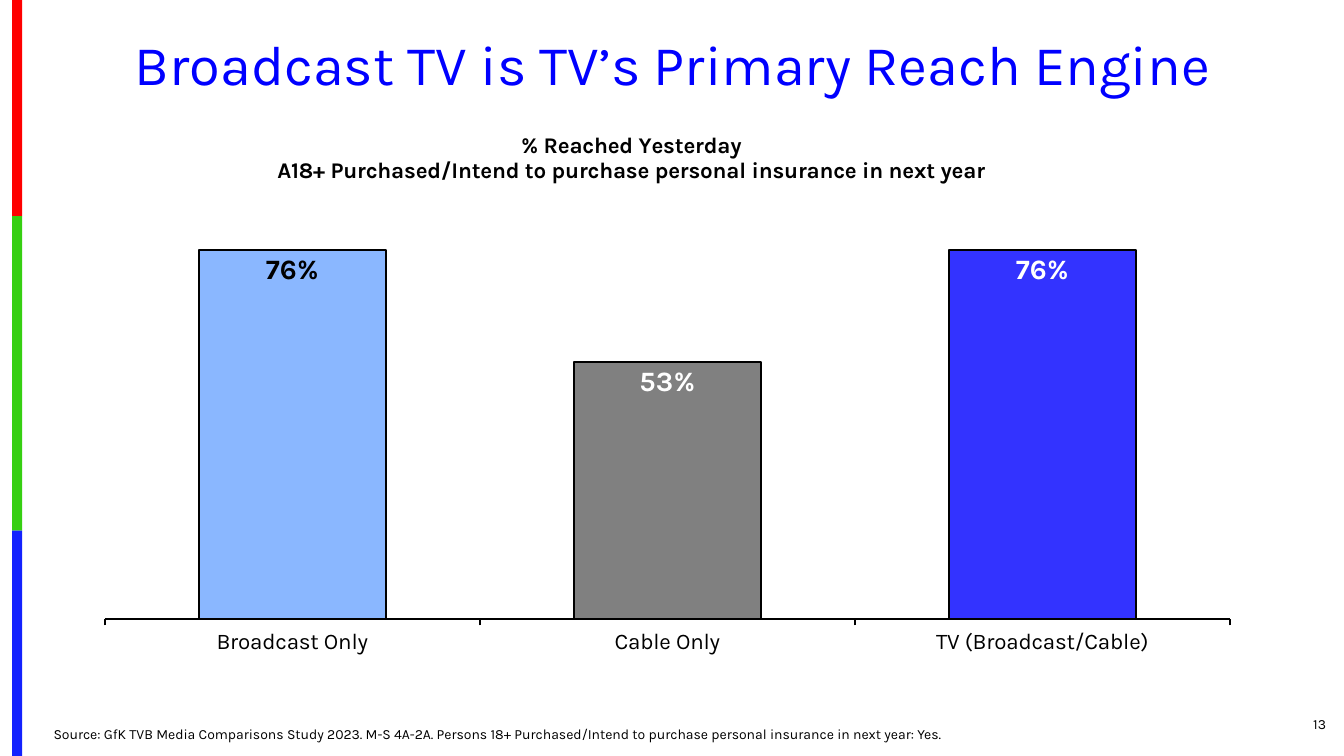
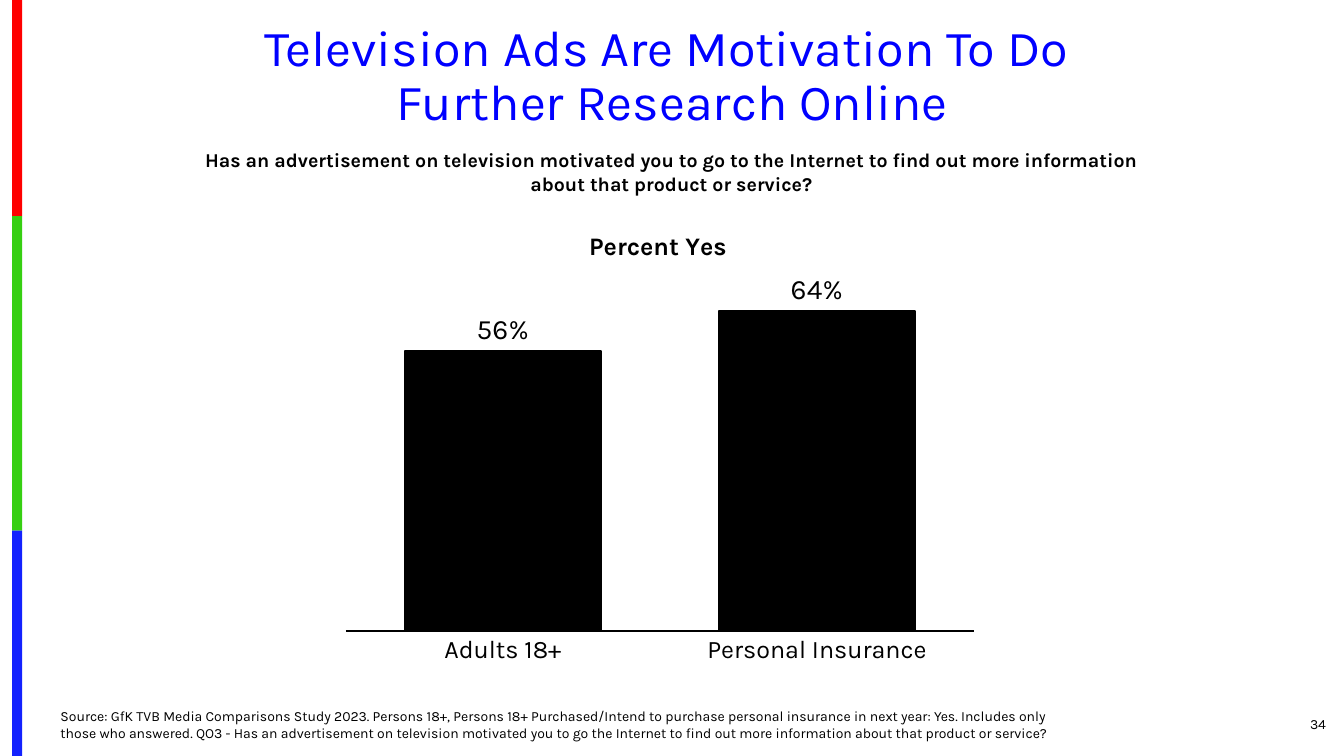
import lxml.etree
import pptx
import pptx.chart.data
import pptx.dml.color
import pptx.enum.chart
import pptx.enum.shapes
import pptx.enum.text
import pptx.oxml.ns
import pptx.util

RGBColor = pptx.dml.color.RGBColor
Pt = pptx.util.Pt
Anchor = pptx.enum.text.MSO_ANCHOR
Align = pptx.enum.text.PP_ALIGN
LabelPosition = pptx.enum.chart.XL_LABEL_POSITION
TickMark = pptx.enum.chart.XL_TICK_MARK
qn = pptx.oxml.ns.qn

BLACK = RGBColor(0x00, 0x00, 0x00)
WHITE = RGBColor(0xFF, 0xFF, 0xFF)
TITLE_BLUE = RGBColor(0x00, 0x00, 0xFF)
STRIPE_RED = RGBColor(0xFE, 0x00, 0x00)
STRIPE_GREEN = RGBColor(0x36, 0xCF, 0x12)
STRIPE_BLUE = RGBColor(0x13, 0x22, 0xFE)
BAR_BLUE = RGBColor(0x33, 0x33, 0xFF)
BAR_LIGHT_BLUE = RGBColor(0x8A, 0xB7, 0xFF)
BAR_GRAY = RGBColor(0x80, 0x80, 0x80)

FONT = "Karla"
STRIPES = [(STRIPE_RED, 28.6), (STRIPE_GREEN, 41.6), (STRIPE_BLUE, 29.8)]


class Deck:
    """Hold the shared style and the current slide; boxes are percentages of the slide."""

    def __init__(self):
        self.presentation = pptx.Presentation()
        self.presentation.slide_width = pptx.util.Inches(13.33)
        self.presentation.slide_height = pptx.util.Inches(7.5)
        self.slide = None

    def box(self, left, top, width, height):
        across = self.presentation.slide_width / 100
        down = self.presentation.slide_height / 100
        return [int(left * across), int(top * down), int(width * across), int(height * down)]

    def style_font(self, font, size, color=BLACK, bold=False):
        font.name = FONT
        font.size = Pt(size)
        font.bold = bold
        font.color.rgb = color

    def set_text(self, shape, text, size, color=BLACK, bold=False,
                 align=Align.LEFT, anchor=Anchor.TOP, spacing=1.0):
        frame = shape.text_frame
        frame.text = text
        frame.word_wrap = True
        frame.auto_size = pptx.enum.text.MSO_AUTO_SIZE.NONE
        frame.vertical_anchor = anchor
        for paragraph in frame.paragraphs:
            paragraph.alignment = align
            paragraph.line_spacing = spacing
            paragraph.space_before = Pt(0)
            for run in paragraph.runs:
                self.style_font(run.font, size, color, bold)

    def place(self, shape, box):
        shape.left, shape.top, shape.width, shape.height = self.box(*box)

    def add_slide(self, number):
        self.slide = self.presentation.slides.add_slide(self.presentation.slide_layouts[1])
        top = 0
        for color, height in STRIPES:
            stripe = self.slide.shapes.add_shape(
                pptx.enum.shapes.MSO_SHAPE.RECTANGLE, *self.box(0.9, top, 0.75, height))
            stripe.shadow.inherit = False
            stripe.fill.solid()
            stripe.fill.fore_color.rgb = color
            stripe.line.fill.background()
            top += height
        self.add_text(str(number), (91.3, 93.07, 8.1, 5.33), 10,
                      align=Align.RIGHT, anchor=Anchor.MIDDLE)

    def add_title(self, text, top, height, size):
        title = self.slide.shapes.title
        self.place(title, (3.45, top, 93.17, height))
        self.set_text(title, text, size, TITLE_BLUE, align=Align.CENTER,
                      anchor=Anchor.MIDDLE, spacing=0.9)

    def add_source(self, text, box, spacing):
        body = self.slide.placeholders[1]
        self.place(body, box)
        self.set_text(body, text, 10, anchor=Anchor.BOTTOM, spacing=spacing)
        for paragraph in body.text_frame.paragraphs:
            properties = paragraph._p.get_or_add_pPr()
            properties.set("marL", "0")
            properties.set("indent", "0")
            lxml.etree.SubElement(properties, qn("a:buNone"))

    def add_text(self, text, box, size, **style):
        self.set_text(self.slide.shapes.add_textbox(*self.box(*box)), text, size, **style)

    def set_layout(self, parent, index, **values):
        layout = parent.find(qn("c:layout"))
        if layout is None:
            layout = parent.makeelement(qn("c:layout"))
            parent.insert(index, layout)
        manual = lxml.etree.SubElement(layout, qn("c:manualLayout"))
        for name, value in values.items():
            lxml.etree.SubElement(manual, qn("c:" + name)).set("val", str(value))

    def paint_bar(self, bar_format, color):
        bar_format.fill.solid()
        bar_format.fill.fore_color.rgb = color
        bar_format.line.color.rgb = BLACK
        bar_format.line.width = Pt(1.5)

    def add_column_chart(self, box, values, title, title_size, title_at, plot_at, maximum,
                         gap, tick, axis_size, colors, label_colors, label_position, bold_labels):
        data = pptx.chart.data.CategoryChartData(number_format="0%")
        data.categories = list(values)
        data.add_series("Series 1", list(values.values()))
        chart = self.slide.shapes.add_chart(
            pptx.enum.chart.XL_CHART_TYPE.COLUMN_CLUSTERED, *self.box(*box), data).chart
        self.style_font(chart.font, 10)
        chart.has_legend = False

        chart.has_title = True
        frame = chart.chart_title.text_frame
        frame.text = title
        for paragraph in frame.paragraphs:
            self.style_font(paragraph.font, title_size, bold=True)
            for run in paragraph.runs:
                self.style_font(run.font, title_size, bold=True)
        self.set_layout(chart.element.find(".//" + qn("c:title")), 1,
                        xMode="edge", yMode="edge", x=title_at[0], y=title_at[1])
        self.set_layout(chart.element.find(".//" + qn("c:plotArea")), 0,
                        layoutTarget="inner", xMode="edge", yMode="edge",
                        x=plot_at[0], y=plot_at[1], w=plot_at[2], h=plot_at[3])

        value_axis = chart.value_axis
        value_axis.minimum_scale = 0
        value_axis.maximum_scale = maximum
        value_axis.has_major_gridlines = False
        value_axis.visible = False
        category_axis = chart.category_axis
        category_axis.major_tick_mark = tick
        category_axis.minor_tick_mark = TickMark.NONE
        category_axis.format.line.color.rgb = BLACK
        category_axis.format.line.width = Pt(1.5)
        self.style_font(category_axis.tick_labels.font, axis_size)

        plot = chart.plots[0]
        plot.gap_width = gap
        plot.vary_by_categories = False
        series = plot.series[0]
        self.paint_bar(series.format, colors[-1])
        labels = series.data_labels
        labels.show_value = True
        labels.number_format = "0%"
        labels.number_format_is_linked = False
        labels.position = label_position
        self.style_font(labels.font, 20, label_colors[-1], bold_labels)
        for index, (color, label_color) in enumerate(zip(colors, label_colors)):
            if color != colors[-1]:
                self.paint_bar(series.points[index].format, color)
            if label_color != label_colors[-1]:
                label = series.points[index].data_label
                self.style_font(label.font, 20, label_color, bold_labels)
                label.position = label_position


def main():
    deck = Deck()

    deck.add_slide(13)
    deck.add_title("Broadcast TV is TV’s Primary Reach Engine", 4.13, 9.47, 40)
    deck.add_source(
        "Source: GfK TVB Media Comparisons Study 2023. M-S 4A-2A. Persons 18+ "
        "Purchased/Intend to purchase personal insurance in next year: Yes.",
        (3.23, 95.6, 70.67, 3.33), 0.9)
    deck.add_column_chart(
        (5.1, 13.07, 90.02, 78.27),
        {"Broadcast Only": 0.76, "Cable Only": 0.53, "TV (Broadcast/Cable)": 0.76},
        title="% Reached Yesterday\n"
              "A18+ Purchased/Intend to purchase personal insurance in next year",
        title_size=16, title_at=(0.17, 0.05), plot_at=(0.03, 0.14, 0.93, 0.74),
        maximum=0.9, gap=100, tick=TickMark.OUTSIDE, axis_size=16,
        colors=[BAR_LIGHT_BLUE, BAR_GRAY, BAR_BLUE], label_colors=[BLACK, WHITE, WHITE],
        label_position=LabelPosition.INSIDE_END, bold_labels=True)

    deck.add_slide(34)
    deck.add_title("Television Ads Are Motivation To Do \vFurther Research Online",
                   2.27, 15.87, 36)
    deck.add_text(
        "Has an advertisement on television motivated you to go to the Internet to find out "
        "more information about that product or service?",
        (14.03, 18.93, 71.87, 7.6), 14, bold=True, align=Align.CENTER)
    deck.add_source(
        "Source: GfK TVB Media Comparisons Study 2023. Persons 18+, Persons 18+ "
        "Purchased/Intend to purchase personal insurance in next year: Yes. Includes only "
        "those who answered. QO3 - Has an advertisement on television motivated you to go "
        "the Internet to find out more information about that product or service?",
        (3.75, 92.8, 76.89, 5.87), 1.0)
    deck.add_column_chart(
        (25.66, 27.07, 46.89, 67.2),
        {"Adults 18+": 0.56, "Personal Insurance": 0.64},
        title="Percent Yes", title_size=18, title_at=(0.38, 0.04),
        plot_at=(0, 0.15, 1, 0.69), maximum=0.7, gap=60, tick=TickMark.NONE, axis_size=18,
        colors=[BLACK, BLACK], label_colors=[BLACK, BLACK],
        label_position=LabelPosition.OUTSIDE_END, bold_labels=False)

    deck.presentation.save("out.pptx")


if __name__ == "__main__":
    main()
